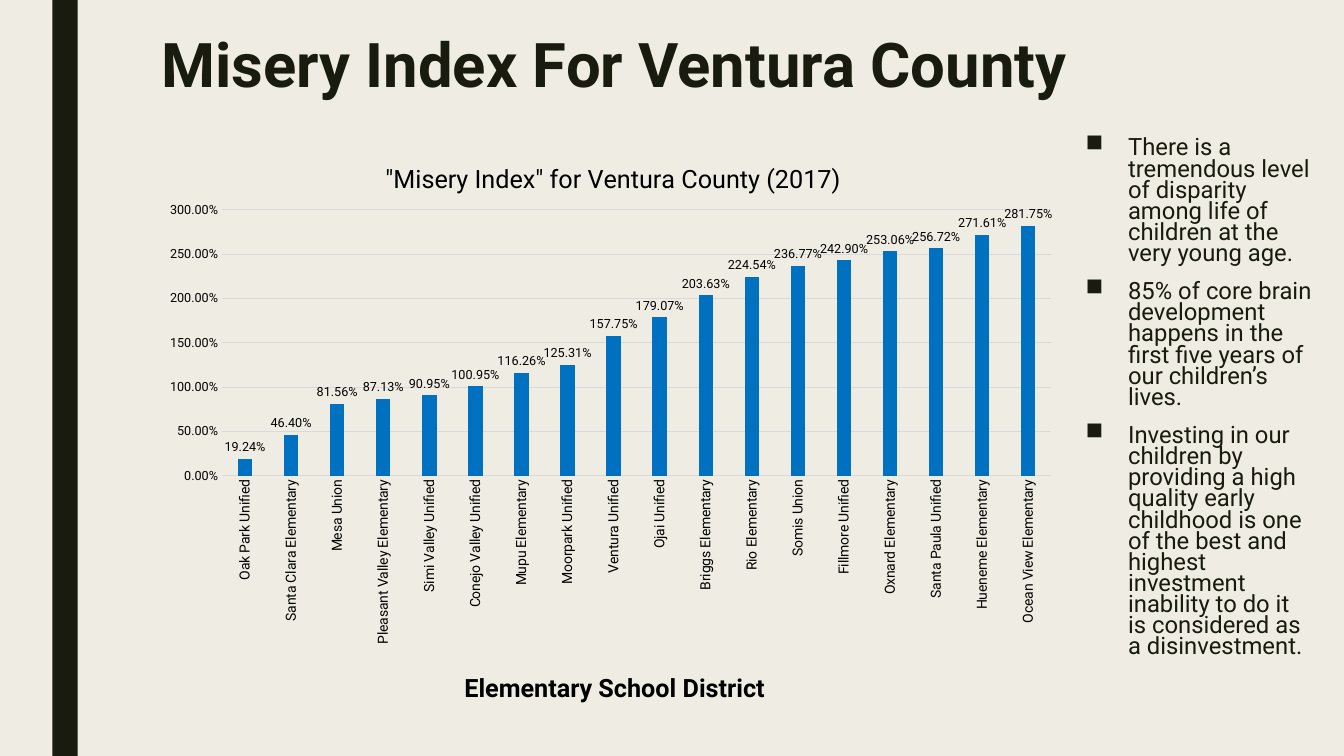
from pptx import Presentation
from pptx.chart.data import CategoryChartData as ChartData
from pptx.dml.color import RGBColor
from pptx.enum.chart import XL_CHART_TYPE as ChartType
from pptx.enum.chart import XL_LABEL_POSITION as LabelPosition
from pptx.enum.chart import XL_TICK_MARK as TickMark
from pptx.enum.shapes import MSO_SHAPE as Shape
from pptx.enum.text import MSO_ANCHOR as Anchor
from pptx.enum.text import PP_ALIGN as Align
from pptx.oxml import parse_xml
from pptx.oxml.ns import nsdecls, qn
from pptx.util import Inches, Pt

MISERY_INDEX = {
    "Oak Park Unified": 0.1924,
    "Santa Clara Elementary": 0.464,
    "Mesa Union": 0.8156,
    "Pleasant Valley Elementary": 0.8713,
    "Simi Valley Unified": 0.9095,
    "Conejo Valley Unified": 1.0095,
    "Mupu Elementary": 1.1626,
    "Moorpark Unified": 1.2531,
    "Ventura Unified": 1.5775,
    "Ojai Unified": 1.7907,
    "Briggs Elementary": 2.0363,
    "Rio Elementary": 2.2454,
    "Somis Union": 2.3677,
    "Fillmore Unified": 2.429,
    "Oxnard Elementary": 2.5306,
    "Santa Paula Unified": 2.5672,
    "Hueneme Elementary": 2.7161,
    "Ocean View Elementary": 2.8175,
}

FINDINGS = [
    "There is a tremendous level of disparity among life of children at the very young age.",
    "85% of core brain development happens in the first five years of our children’s lives.",
    "Investing in our children by providing a high quality early childhood is one of the best "
    "and highest investment inability to do it is considered as a disinvestment.",
]


def color(value):
    return RGBColor.from_string(value)


def place(shape, area):
    shape.left, shape.top, shape.width, shape.height = map(Inches, area)


def set_layout(element, inner=False, **fractions):
    for old in element.findall(qn("c:layout")):
        element.remove(old)
    target = '<c:layoutTarget val="inner"/>' if inner else ""
    modes = "".join(f'<c:{key}Mode val="edge"/>' for key in "xy")
    sizes = "".join(f'<c:{key} val="{value}"/>' for key, value in fractions.items())
    layout = parse_xml(
        f'<c:layout {nsdecls("c")}><c:manualLayout>{target}{modes}{sizes}'
        "</c:manualLayout></c:layout>"
    )
    text = element.find(qn("c:tx"))
    element.insert(0 if text is None else 1, layout)


class MiserySlide:
    font_name = "Roboto"
    ink = "191B0E"
    paper = "EFEDE3"
    black = "000000"
    grid = "D9D9D9"
    bar = "0070C0"
    percent = "0.00%"

    def __init__(self, deck):
        self.page = deck.slides.add_slide(deck.slide_layouts[5])
        fill = self.page.background.fill
        fill.solid()
        fill.fore_color.rgb = color(self.paper)

    def style(self, font, size, ink, bold=False):
        font.name = self.font_name
        font.size = Pt(size)
        font.bold = bold
        font.color.rgb = color(ink)

    def band(self, area):
        band = self.page.shapes.add_shape(Shape.RECTANGLE, *map(Inches, area))
        band.shadow.inherit = False
        band.fill.solid()
        band.fill.fore_color.rgb = color(self.ink)
        band.line.fill.background()

    def title(self, text, area):
        box = self.page.shapes.title
        place(box, area)
        frame = box.text_frame
        frame.text = text
        frame.word_wrap = True
        frame.vertical_anchor = Anchor.TOP
        para = frame.paragraphs[0]
        para.alignment = Align.LEFT
        para.line_spacing = 0.89
        self.style(para.font, 44, self.ink, bold=True)

    def bullets(self, texts, area):
        frame = self.page.shapes.add_textbox(*map(Inches, area)).text_frame
        frame.word_wrap = True
        frame.text = "\n".join(texts)
        for para in frame.paragraphs:
            para.line_spacing = 0.74
            para.space_before = Pt(10)
            para.space_after = Pt(2)
            self.style(para.font, 17, self.ink)
            properties = para._p.get_or_add_pPr()
            indent = Inches(0.42)
            properties.set("marL", str(indent))
            properties.set("indent", str(-indent))
            bullet = parse_xml(f'<a:buChar {nsdecls("a")} char="■"/>')
            properties.find(qn("a:defRPr")).addprevious(bullet)

    def caption(self, holder, text, bold, x, y):
        holder.text_frame.text = text
        self.style(holder.text_frame.paragraphs[0].font, 18, self.black, bold)
        set_layout(holder._element, x=x, y=y)

    def chart(self, values, area):
        data = ChartData(number_format=self.percent)
        data.categories = list(values)
        data.add_series("Series 1", list(values.values()))
        chart = self.page.shapes.add_chart(
            ChartType.COLUMN_CLUSTERED, *map(Inches, area), data
        ).chart
        self.style(chart.font, 10, self.black)
        chart.has_legend = False
        chart.has_title = True
        self.caption(
            chart.chart_title, '"Misery Index" for Ventura County (2017)', False, 0.25, 0.04
        )
        plot_area = chart._chartSpace.chart.plotArea
        set_layout(plot_area, inner=True, x=0.077, y=0.13, w=0.903, h=0.456)
        self.columns(chart.plots[0])
        self.axes(chart.category_axis, chart.value_axis)

    def columns(self, plot):
        plot.gap_width = 219
        plot.overlap = -27
        plot.vary_by_categories = False
        fill = plot.series[0].format.fill
        fill.solid()
        fill.fore_color.rgb = color(self.bar)
        plot.has_data_labels = True
        labels = plot.data_labels
        labels.show_value = True
        labels.position = LabelPosition.OUTSIDE_END
        labels.number_format = self.percent
        labels.number_format_is_linked = False
        self.style(labels.font, 9, self.black)

    def axes(self, districts, scale):
        for axis, size in ((districts, 10), (scale, 9)):
            axis.major_tick_mark = axis.minor_tick_mark = TickMark.NONE
            self.style(axis.tick_labels.font, size, self.black)
        self.caption(districts.axis_title, "Elementary School District", True, 0.336, 0.913)
        districts._element.find(qn("c:txPr")).find(qn("a:bodyPr")).set("rot", "-5400000")
        scale.format.line.fill.background()
        scale.minimum_scale, scale.maximum_scale, scale.major_unit = 0, 3, 0.5
        scale.tick_labels.number_format = self.percent
        scale.tick_labels.number_format_is_linked = False
        for line in (districts.format.line, scale.major_gridlines.format.line):
            line.color.rgb = color(self.grid)
            line.width = Pt(0.75)


def main():
    deck = Presentation()
    deck.slide_width, deck.slide_height = Inches(13.33), Inches(7.5)
    slide = MiserySlide(deck)
    slide.band((0.52, 0, 0.25, 7.5))
    slide.title("Misery Index For Ventura County", (1.5, 0.3, 10.5, 1.03))
    slide.chart(MISERY_INDEX, (1.5, 1.33, 9.11, 5.79))
    slide.bullets(FINDINGS, (10.67, 1.33, 2.44, 5.79))
    deck.save("out.pptx")


if __name__ == "__main__":
    main()
